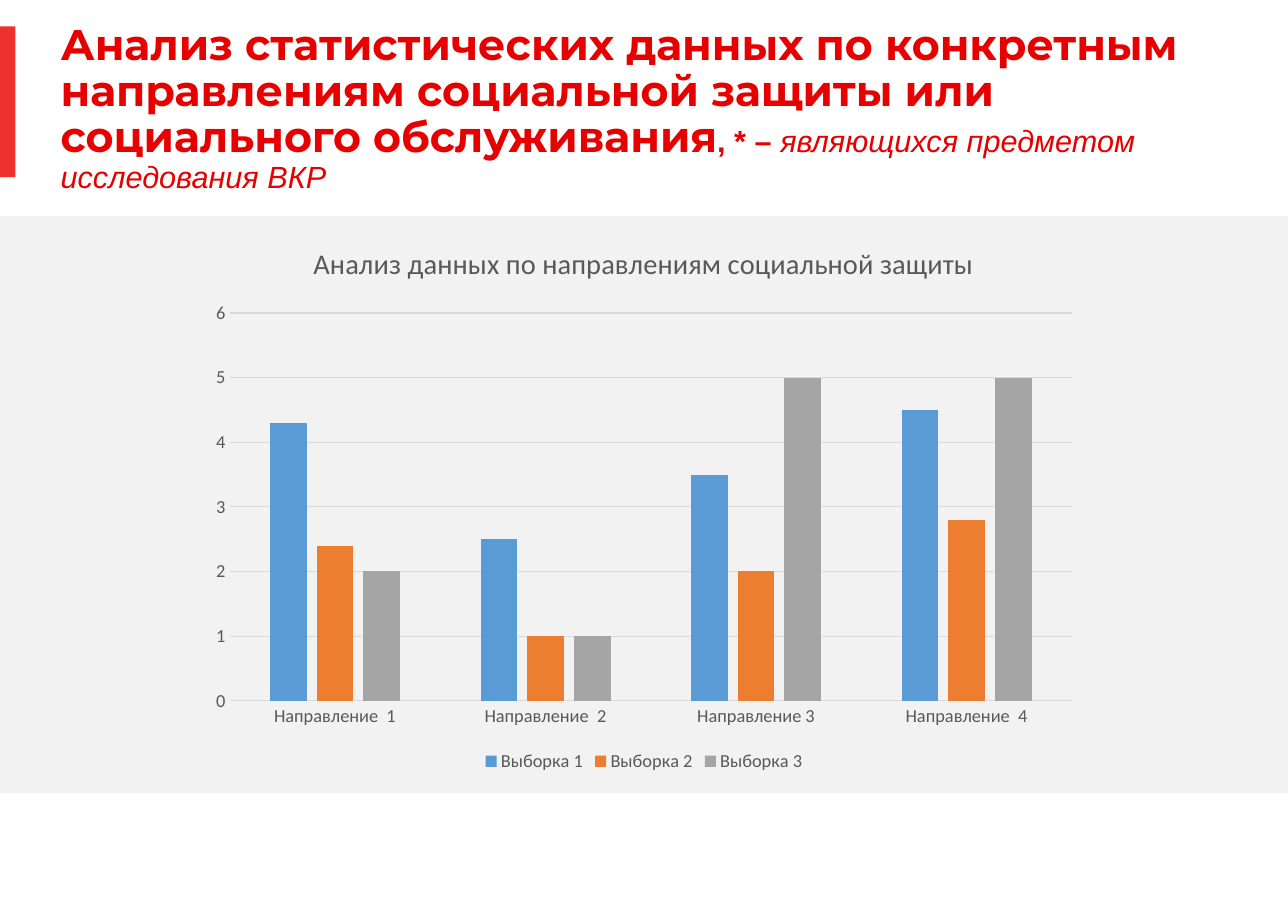
from dataclasses import dataclass

from pptx import Presentation
from pptx.chart.data import CategoryChartData
from pptx.dml.color import RGBColor
from pptx.enum.chart import XL_CHART_TYPE, XL_LEGEND_POSITION, XL_TICK_MARK
from pptx.enum.shapes import MSO_SHAPE
from pptx.enum.text import MSO_ANCHOR, PP_ALIGN
from pptx.util import Pt

# (text, role)
HEAD = [
    ("Анализ статистических данных по конкретным направлениям "
     "социальной защиты или социального обслуживания", "main"),
    (", * – ", "mark"),
    ("являющихся предметом исследования ВКР", "note"),
]
CAPTION = "Анализ данных по направлениям социальной защиты"
CATS = ["Направление  1", "Направление  2", "Направление 3", "Направление  4"]
SERIES = {
    "Выборка 1": (4.3, 2.5, 3.5, 4.5),
    "Выборка 2": (2.4, 1, 2, 2.8),
    "Выборка 3": (2, 1, 5, 5),
}


@dataclass(frozen=True)
class Theme:
    panel: str = "F2F2F2"
    accent: str = "EE312C"
    head: str = "E60000"
    text: str = "595959"
    grid: str = "D9D9D9"
    bars: tuple = ("5B9BD5", "ED7D31", "A5A5A5")
    chart: str = "Calibri"
    caption: float = 18.6
    label: float = 12
    # role: font, size, bold, italic
    roles: tuple = (
        ("main", ("Montserrat", 28, True, False)),
        ("mark", ("Arial", 20, True, False)),
        ("note", ("Arial", 20, False, True)),
    )


THEME = Theme()
WIDTH, HEIGHT = 841.68, 595.44
PANEL = (0, 141.1, WIDTH, 377.3)
ACCENT = (0, 17.3, 10.1, 98.6)
TITLE = (39.6, 14.4, 762.5, 113.8)
CHART = (129.6, 144.7, 582.5, 362.9)


def color(code):
    return RGBColor.from_string(code)


def style(font, name, size, code, bold=False, italic=False):
    font.name, font.size = name, Pt(size)
    font.bold, font.italic = bold, italic
    font.color.rgb = color(code)


def add_block(slide, box, code):
    block = slide.shapes.add_shape(MSO_SHAPE.RECTANGLE, *map(Pt, box))
    block.shadow.inherit = False
    block.fill.solid()
    block.fill.fore_color.rgb = color(code)
    block.line.fill.background()


def set_title(title):
    title.left, title.top, title.width, title.height = map(Pt, TITLE)
    frame = title.text_frame
    frame.margin_left = frame.margin_right = 0
    frame.margin_top = frame.margin_bottom = 0
    frame.vertical_anchor = MSO_ANCHOR.MIDDLE
    frame.word_wrap = True
    para = frame.paragraphs[0]
    para.alignment = PP_ALIGN.LEFT
    para.line_spacing = 0.9
    roles = dict(THEME.roles)
    for text, role in HEAD:
        run = para.add_run()
        run.text = text
        name, size, bold, italic = roles[role]
        style(run.font, name, size, THEME.head, bold, italic)


def set_line(line):
    line.color.rgb = color(THEME.grid)
    line.width = Pt(0.75)


def add_bars(slide):
    data = CategoryChartData()
    data.categories = CATS
    for name, vals in SERIES.items():
        data.add_series(name, vals)
    chart = slide.shapes.add_chart(
        XL_CHART_TYPE.COLUMN_CLUSTERED, *map(Pt, CHART), data).chart
    style(chart.font, THEME.chart, THEME.label, THEME.text)

    chart.has_title = True
    chart.chart_title.include_in_layout = False
    frame = chart.chart_title.text_frame
    frame.text = CAPTION
    style(frame.paragraphs[0].runs[0].font,
          THEME.chart, THEME.caption, THEME.text)

    chart.has_legend = True
    chart.legend.position = XL_LEGEND_POSITION.BOTTOM
    chart.legend.include_in_layout = False
    style(chart.legend.font, THEME.chart, THEME.label, THEME.text)

    plot = chart.plots[0]
    plot.gap_width, plot.overlap = 219, -27
    plot.vary_by_categories = False
    for series, code in zip(plot.series, THEME.bars):
        series.format.fill.solid()
        series.format.fill.fore_color.rgb = color(code)

    cat, val = chart.category_axis, chart.value_axis
    for axis in (cat, val):
        axis.major_tick_mark = axis.minor_tick_mark = XL_TICK_MARK.NONE
        style(axis.tick_labels.font, THEME.chart, THEME.label, THEME.text)
    set_line(cat.format.line)
    val.format.line.fill.background()
    val.minimum_scale, val.maximum_scale, val.major_unit = 0, 6, 1
    val.has_major_gridlines = True
    set_line(val.major_gridlines.format.line)


def main():
    deck = Presentation()
    deck.slide_width, deck.slide_height = Pt(WIDTH), Pt(HEIGHT)
    slide = deck.slides.add_slide(deck.slide_layouts[5])
    add_block(slide, PANEL, THEME.panel)
    add_block(slide, ACCENT, THEME.accent)
    set_title(slide.shapes.title)
    add_bars(slide)
    deck.save("out.pptx")


if __name__ == "__main__":
    main()
